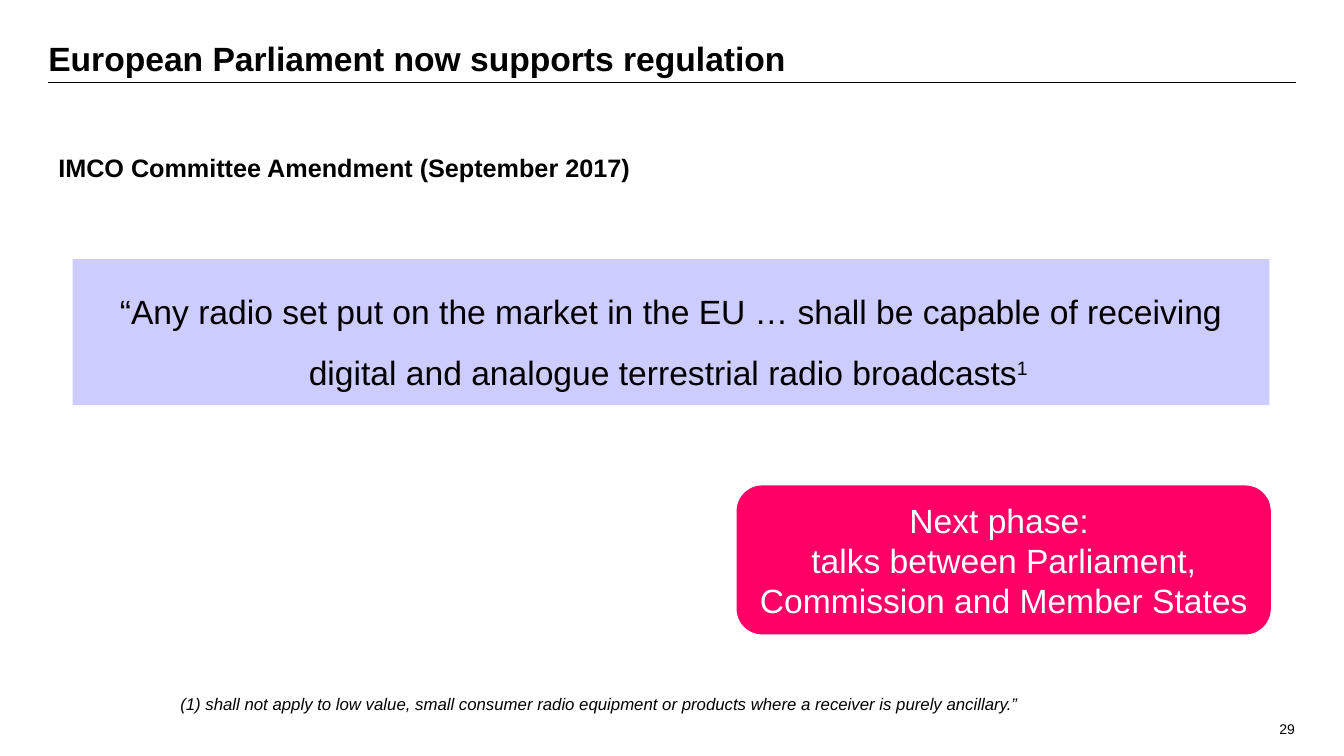
from dataclasses import dataclass

from lxml import etree
from pptx import Presentation
from pptx import util as u
from pptx.dml.color import RGBColor
from pptx.enum import shapes, text
from pptx.oxml.ns import qn


@dataclass(frozen=True)
class Theme:
    font: str = "Arial"
    black: str = "000000"
    white: str = "FFFFFF"
    lavender: str = "CCCCFF"
    pink: str = "FF0066"
    heading: int = 24
    subheading: int = 18
    footnote: int = 12
    page_number: int = 10


THEME = Theme()
ALIGN = text.PP_ALIGN
ANCHOR = text.MSO_ANCHOR


@dataclass(frozen=True)
class Block:
    """A text block; in its words, "^" starts a superscript."""
    box: tuple[float, float, float, float]
    paragraphs: tuple[str, ...]
    size: int
    color: str = THEME.black
    bold: bool = False
    italic: bool = False
    align: ALIGN = ALIGN.LEFT
    anchor: ANCHOR = ANCHOR.TOP
    insets: tuple[float, float] = (0.1, 0.05)
    line_spacing: float = 1.0
    wrap: bool = True
    preset: shapes.MSO_SHAPE | None = None
    fill: str | None = None
    outline: str | None = None


BLOCKS = (
    Block((12, 7.1, 0.94, 0.27), ("29",), THEME.page_number, align=ALIGN.RIGHT),
    Block((0.48, 0.3, 12.37, 0.52), ("European Parliament now supports regulation",),
          THEME.heading, bold=True, anchor=ANCHOR.BOTTOM, insets=(0, 0.04),
          line_spacing=0.9),
    Block((0.72, 2.57, 11.87, 1.45),
          ("“Any radio set put on the market in the EU … shall be capable of receiving "
           "digital and analogue terrestrial radio broadcasts^1 ",),
          THEME.heading, align=ALIGN.CENTER, insets=(0.1, 0.12), line_spacing=1.5,
          preset=shapes.MSO_SHAPE.RECTANGLE, fill=THEME.lavender),
    Block((1.69, 6.78, 10.26, 0.44),
          ("(1) shall not apply to low value, small consumer radio equipment or "
           "products where a receiver is purely ancillary.”",),
          THEME.footnote, italic=True, insets=(0.1, 0.12)),
    Block((0.48, 1.46, 5.93, 0.4), ("IMCO Committee Amendment (September 2017)",),
          THEME.subheading, bold=True, wrap=False),
    Block((7.32, 4.83, 5.27, 1.45),
          ("Next phase: ", "talks between Parliament, Commission and Member States"),
          THEME.heading, color=THEME.white, align=ALIGN.CENTER, anchor=ANCHOR.MIDDLE,
          preset=shapes.MSO_SHAPE.ROUNDED_RECTANGLE, fill=THEME.pink,
          outline=THEME.pink),
)


def set_attributes(target: object, values: dict[str, object]) -> None:
    for name, value in values.items():
        setattr(target, name, value)


def add_block_shape(slide, block: Block):
    box = [u.Inches(length) for length in block.box]
    if block.preset is None:
        return slide.shapes.add_textbox(*box)
    shape = slide.shapes.add_shape(block.preset, *box)
    shape.shadow.inherit = False
    shape.fill.solid()
    shape.fill.fore_color.rgb = RGBColor.from_string(block.fill)
    if block.outline:
        shape.line.color.rgb = RGBColor.from_string(block.outline)
        shape.line.width = u.Pt(2)
    else:
        shape.line.fill.background()
    return shape


def write_paragraph(paragraph, words: str, block: Block) -> None:
    set_attributes(paragraph, {"alignment": block.align,
                               "line_spacing": block.line_spacing})
    for index, part in enumerate(words.split("^")):
        run = paragraph.add_run()
        run.text = part
        set_attributes(run.font, {"name": THEME.font, "size": u.Pt(block.size),
                                  "bold": block.bold, "italic": block.italic})
        run.font.color.rgb = RGBColor.from_string(block.color)
        if index:
            run._r.get_or_add_rPr().set("baseline", "30000")


def draw_block(slide, block: Block) -> None:
    frame = add_block_shape(slide, block).text_frame
    side, end = (u.Inches(inset) for inset in block.insets)
    set_attributes(frame, {"word_wrap": block.wrap, "vertical_anchor": block.anchor,
                           "margin_left": side, "margin_right": side,
                           "margin_top": end, "margin_bottom": end})
    for index, words in enumerate(block.paragraphs):
        paragraph = frame.add_paragraph() if index else frame.paragraphs[0]
        write_paragraph(paragraph, words, block)


def draw_title_rule(slide) -> None:
    ends = [u.Inches(length) for length in (0.48, 0.82, 12.85, 0.82)]
    rule = slide.shapes.add_connector(shapes.MSO_CONNECTOR.STRAIGHT, *ends)
    rule.line.color.rgb = RGBColor.from_string(THEME.black)
    rule.line.width = u.Pt(1)
    etree.SubElement(rule._element.spPr, qn("a:effectLst"))


def main() -> None:
    presentation = Presentation()
    set_attributes(presentation, {"slide_width": u.Inches(13.33),
                                  "slide_height": u.Inches(7.5)})
    slide = presentation.slides.add_slide(presentation.slide_layouts[6])
    draw_title_rule(slide)
    for block in BLOCKS:
        draw_block(slide, block)
    presentation.save("out.pptx")


if __name__ == "__main__":
    main()
